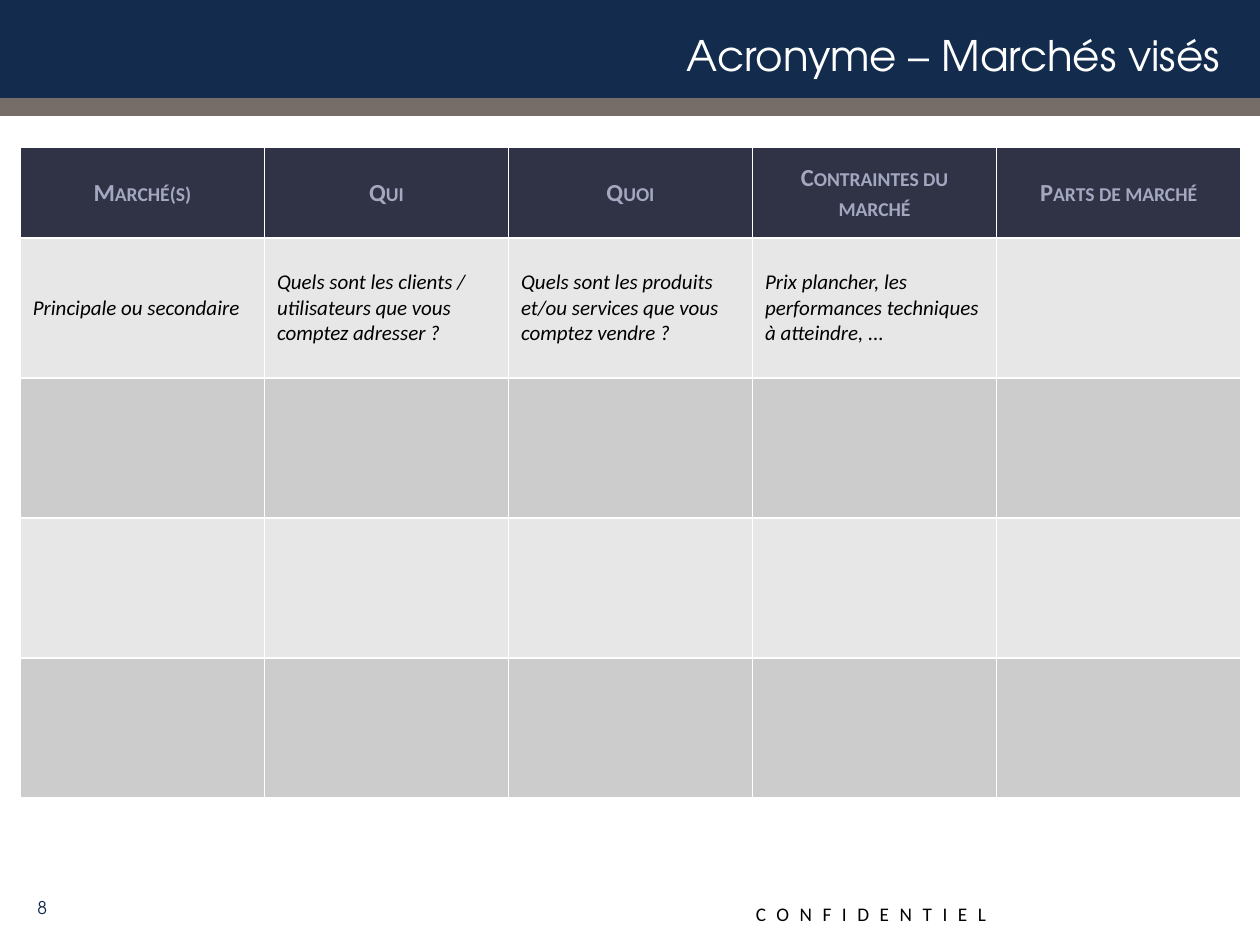
from lxml.etree import SubElement
from pptx import Presentation
from pptx.dml.color import RGBColor
from pptx.enum.shapes import MSO_SHAPE
from pptx.enum.text import MSO_ANCHOR, PP_ALIGN
from pptx.oxml.ns import qn
from pptx.util import Cm, Pt

COLORS = {
    "navy": "132C4D", "taupe": "766C68", "white": "FFFFFF", "black": "000000",
    "header": "303346", "header_text": "A3A7C0",
    "light_row": "E7E7E7", "dark_row": "CCCCCC",
}
TITLE = {"name": "TeX Gyre Adventor", "size": Pt(24), "color": "white"}
NUMBER = {"name": "TeX Gyre Adventor", "size": Pt(10), "color": "navy"}
NOTICE = {"name": "Calibri", "size": Pt(11), "color": "black"}
HEADING = {"name": "Calibri", "size": Pt(14), "bold": True, "color": "header_text"}
EXAMPLE = {"name": "Calibri", "size": Pt(12), "bold": False, "italic": True,
           "color": "black"}

HEADINGS = ["Marché(s)", "Qui", "Quoi", "Contraintes du marché", "Parts de marché"]
EXAMPLES = [
    "Principale ou secondaire",
    "Quels sont les clients / utilisateurs que vous comptez adresser ?",
    "Quels sont les produits et/ou services que vous comptez vendre ?",
    "Prix plancher, les performances techniques à atteindre, ...",
    "",
]
ROW_COUNT = 5


def rgb(color):
    return RGBColor.from_string(COLORS[color])


def write(frame, text, style, align=PP_ALIGN.LEFT):
    paragraph = frame.paragraphs[0]
    paragraph.alignment = align
    run = paragraph.add_run()
    run.text = text
    for attribute, value in style.items():
        if attribute == "color":
            run.font.color.rgb = rgb(value)
        else:
            setattr(run.font, attribute, value)
    return run


def add_label(slide, box, text, style, align=PP_ALIGN.LEFT,
              anchor=MSO_ANCHOR.TOP, wrap=True):
    frame = slide.shapes.add_textbox(*map(Cm, box)).text_frame
    frame.word_wrap = wrap
    frame.vertical_anchor = anchor
    return write(frame, text, style, align)


def add_banner(slide, left, top, width, height):
    # Navy band with a taupe strip along its lower edge
    strip_height = 0.36
    bands = [(top, height - 0.05, "navy"),
             (top + height - strip_height, strip_height, "taupe")]
    for band_top, band_height, color in bands:
        band = slide.shapes.add_shape(
            MSO_SHAPE.RECTANGLE, Cm(left), Cm(band_top), Cm(width), Cm(band_height))
        band.shadow.inherit = False
        band.fill.solid()
        band.fill.fore_color.rgb = rgb(color)
        band.line.fill.background()
    # Title
    add_label(slide, (left + 0.38, top + 0.36, width - 0.94, 1.47),
              "Acronyme – Marchés visés", TITLE, PP_ALIGN.RIGHT, MSO_ANCHOR.MIDDLE)


def add_borders(cell):
    properties = cell._tc.get_or_add_tcPr()
    for position, side in enumerate(("a:lnL", "a:lnR", "a:lnT", "a:lnB")):
        line = properties.makeelement(qn(side), {"w": str(Pt(1))})
        fill = SubElement(line, qn("a:solidFill"))
        SubElement(fill, qn("a:srgbClr"), val=COLORS["white"])
        properties.insert(position, line)


def add_markets(slide, left, top, width, height):
    table = slide.shapes.add_table(ROW_COUNT, len(HEADINGS), Cm(left), Cm(top),
                                   Cm(width), Cm(height)).table
    # Short heading row, then equal rows
    heading_height = 1.83
    for column in table.columns:
        column.width = Cm(width / len(HEADINGS))
    for index, row in enumerate(table.rows):
        row.height = Cm((height - heading_height) / (ROW_COUNT - 1)
                        if index else heading_height)
        color = ("dark_row", "light_row")[index % 2] if index else "header"
        for cell in row.cells:
            cell.fill.solid()
            cell.fill.fore_color.rgb = rgb(color)
            cell.vertical_anchor = MSO_ANCHOR.MIDDLE
            add_borders(cell)
    # Headings in small capitals, examples in the first row below
    for column, (heading, example) in enumerate(zip(HEADINGS, EXAMPLES)):
        run = write(table.cell(0, column).text_frame, heading, HEADING,
                    PP_ALIGN.CENTER)
        run.font._element.set("cap", "small")
        if example:
            write(table.cell(1, column).text_frame, example, EXAMPLE)


def add_footer(slide, left, top, width, height):
    # Page number
    add_label(slide, (left - 0.1, top, 1.3, height), "8", NUMBER,
              PP_ALIGN.RIGHT, MSO_ANCHOR.MIDDLE)
    # Widely spaced notice
    notice = add_label(slide, (left + 0.59 * width, top + 0.28, 5.41, 0.74),
                       "CONFIDENTIEL", NOTICE, wrap=False)
    notice.font._element.set("spc", "600")


def main():
    presentation = Presentation()
    presentation.slide_width = Cm(25.4)
    presentation.slide_height = Cm(19.05)
    slide = presentation.slides.add_slide(presentation.slide_layouts[6])
    add_banner(slide, 0, 0, 25.4, 2.34)
    add_footer(slide, 0, 17.78, 25.4, 1.02)
    add_markets(slide, 0.41, 2.97, 24.6, 13.11)
    presentation.save("out.pptx")


if __name__ == "__main__":
    main()
